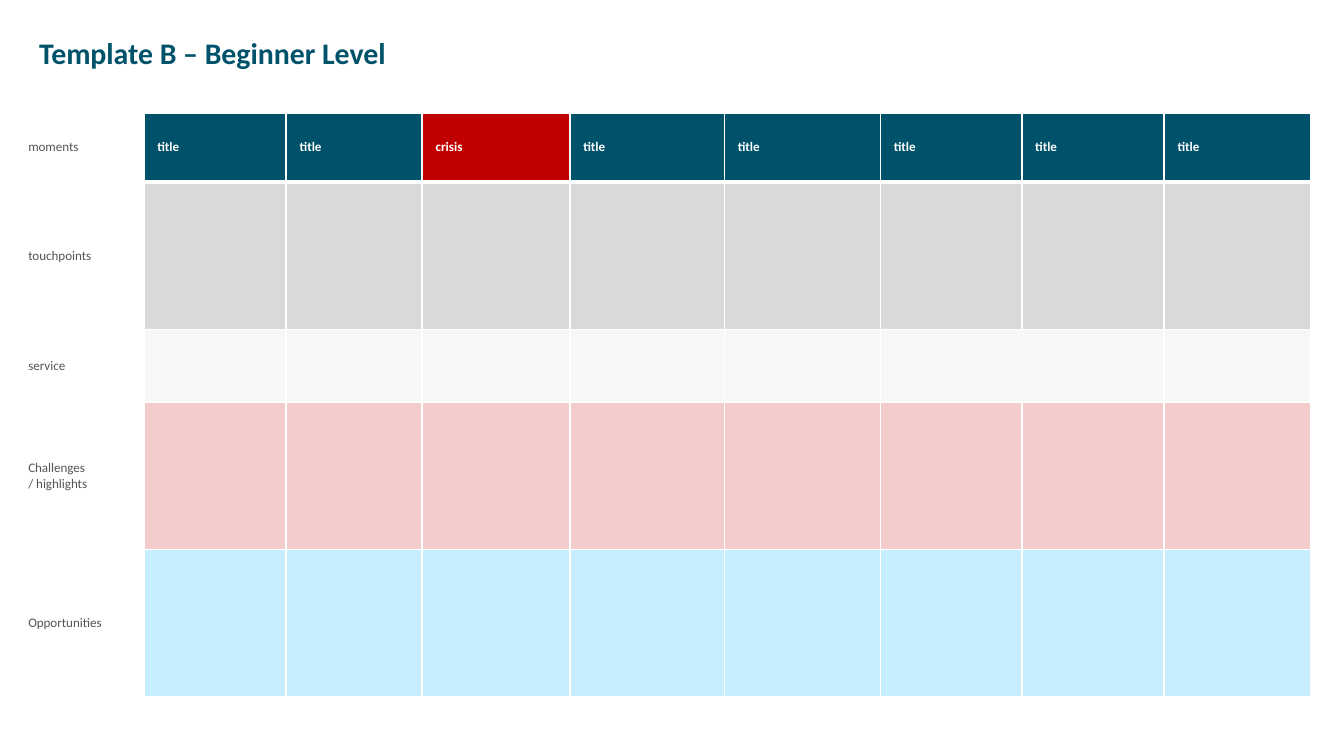
"""Build the beginner-level journey template slide."""
import pptx
import pptx.dml.color
import pptx.enum.text
import pptx.oxml.ns
import pptx.util
from lxml import etree

Cm = pptx.util.Cm
Pt = pptx.util.Pt

COLOURS = {
    "teal": "00516A",
    "crisis": "C00000",
    "label": "565456",
    "white": "FFFFFF",
    "touchpoints": "D9D9D9",
    "service": "F7F7F7",
    "challenges": "F2CBCB",
    "opportunities": "C6EEFF",
}
TITLE_FONT = {"name": "Calibri", "size": Pt(16), "bold": True}
LABEL_FONT = {"name": "Calibri", "size": Pt(7), "bold": False}
HEADER_FONT = {**LABEL_FONT, "bold": True}

COLUMN_WIDTHS = [2.44, 2.69, 2.57, 2.79, 2.92, 2.95, 2.67, 2.69, 2.77]
MOMENTS = ["title", "title", "crisis", "title", "title", "title", "title", "title"]
ROWS = [
    ("moments", 1.3, "teal"),
    ("touchpoints", 2.79, "touchpoints"),
    ("service", 1.37, "service"),
    ("Challenges\n/ highlights", 2.79, "challenges"),
    ("Opportunities", 2.79, "opportunities"),
]


def rgb(colour):
    """Return the named colour as an RGB value."""
    return pptx.dml.color.RGBColor.from_string(COLOURS[colour])


def write_text(text_frame, text, font, colour):
    """Write the text and give every paragraph the font format."""
    text_frame.text = text
    for paragraph in text_frame.paragraphs:
        paragraph.alignment = pptx.enum.text.PP_ALIGN.LEFT
        for run in paragraph.runs:
            for name, value in font.items():
                setattr(run.font, name, value)
            run.font.color.rgb = rgb(colour)


def add_borders(cell, bottom_width):
    """Draw white borders on the four sides of a cell."""
    properties = cell._tc.get_or_add_tcPr()
    widths = {"lnL": 1, "lnR": 1, "lnT": 1, "lnB": bottom_width}
    for side, width in widths.items():
        line = etree.SubElement(
            properties, pptx.oxml.ns.qn(f"a:{side}"), w=str(Pt(width)))
        fill = etree.SubElement(line, pptx.oxml.ns.qn("a:solidFill"))
        etree.SubElement(
            fill, pptx.oxml.ns.qn("a:srgbClr"), val=COLOURS["white"])


def format_cell(cell, colour, bottom_width):
    """Give a cell its borders, fill and vertical anchor."""
    add_borders(cell, bottom_width)
    cell.fill.solid()
    cell.fill.fore_color.rgb = rgb(colour)
    cell.vertical_anchor = pptx.enum.text.MSO_ANCHOR.MIDDLE


def place_title(slide, left, top, width, height):
    """Move the title placeholder into the box and format it."""
    title = slide.shapes.title
    box = {"left": left, "top": top, "width": width, "height": height}
    for name, value in box.items():
        setattr(title, name, value)
    frame_format = {
        "margin_left": 0, "margin_top": 0, "margin_right": 0, "margin_bottom": 0,
        "vertical_anchor": pptx.enum.text.MSO_ANCHOR.MIDDLE,
        "auto_size": pptx.enum.text.MSO_AUTO_SIZE.NONE, "word_wrap": True,
    }
    for name, value in frame_format.items():
        setattr(title.text_frame, name, value)
    write_text(title.text_frame, "Template B – Beginner Level", TITLE_FONT, "teal")


def add_journey_table(slide, left, top, width, height):
    """Add the journey table, scaled to the box."""
    table = slide.shapes.add_table(
        len(ROWS), len(COLUMN_WIDTHS), left, top, width, height).table
    table.horz_banding = False
    for column, share in zip(table.columns, COLUMN_WIDTHS):
        column.width = round(width * share / sum(COLUMN_WIDTHS))
    total_height = sum(row_height for _, row_height, _ in ROWS)
    for row_index, (label, row_height, colour) in enumerate(ROWS):
        row = table.rows[row_index]
        row.height = round(height * row_height / total_height)
        bottom_width = 3 if row_index == 0 else 1
        for column_index, cell in enumerate(row.cells):
            format_cell(cell, colour if column_index else "white", bottom_width)
        write_text(row.cells[0].text_frame, label, LABEL_FONT, "label")
    for column_index, moment in enumerate(MOMENTS, start=1):
        cell = table.cell(0, column_index)
        write_text(cell.text_frame, moment, HEADER_FONT, "white")
        if moment == "crisis":
            cell.fill.fore_color.rgb = rgb("crisis")
    table.cell(2, 6).merge(table.cell(2, 7))


def main():
    """Build and save the presentation."""
    presentation = pptx.Presentation()
    presentation.slide_width = Cm(25.4)
    presentation.slide_height = Cm(14.29)
    slide = presentation.slides.add_slide(presentation.slide_layouts[5])
    place_title(slide, Cm(0.74), Cm(0.48), Cm(21.79), Cm(1.04))
    add_journey_table(slide, Cm(0.28), Cm(2.14), Cm(24.49), Cm(11.04))
    presentation.save("out.pptx")


if __name__ == "__main__":
    main()
